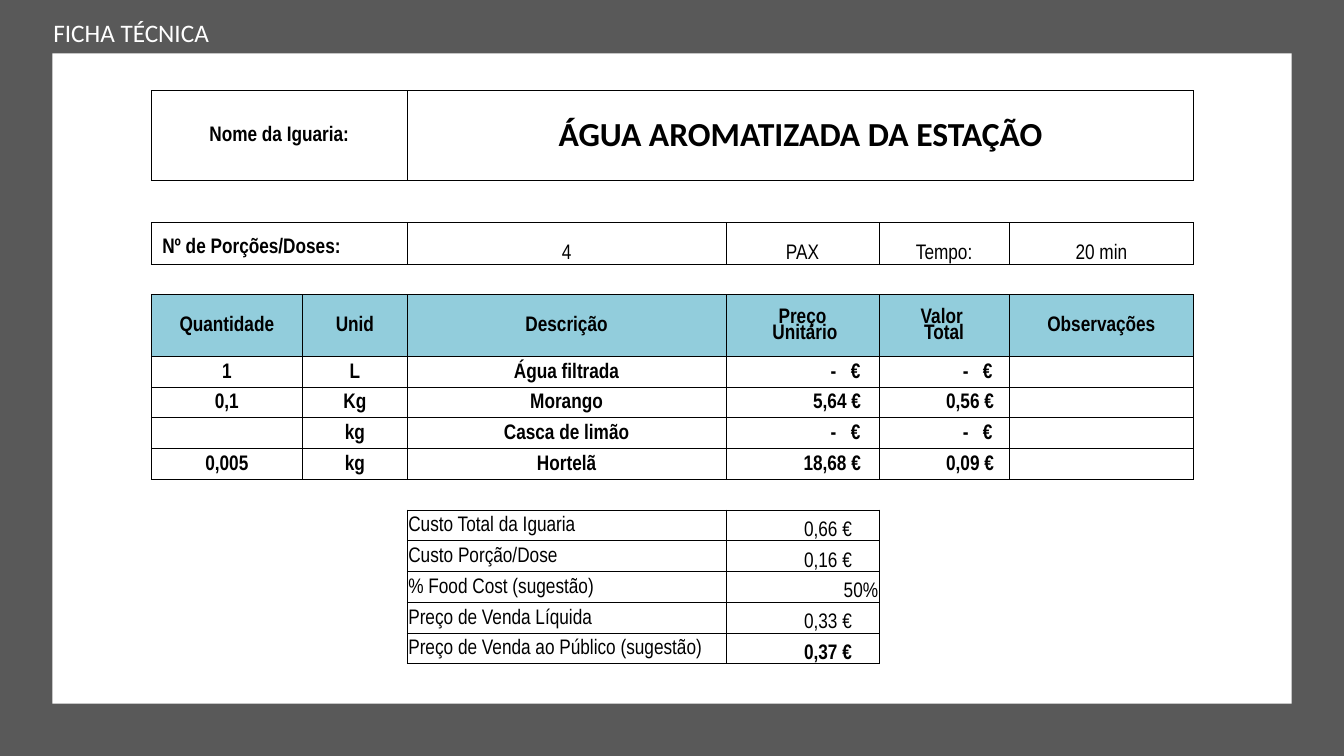
"""Build the recipe cost sheet slide."""
from lxml import etree
from pptx import Presentation
from pptx import util as u
from pptx.dml.color import RGBColor
from pptx.enum import shapes, text
from pptx.oxml import parse_xml
from pptx.oxml.ns import nsdecls, qn

COLORS = {"frame": "595959", "paper": "FFFFFF", "header": "92CDDC", "ink": "000000"}
HEADING = "FICHA TÉCNICA"
DISH = ("Nome da Iguaria:", "ÁGUA AROMATIZADA DA ESTAÇÃO")
SERVING = ["Nº de Porções/Doses:", "4", "PAX", "Tempo:", "20 min"]
HEADERS = ["Quantidade", "Unid", "Descrição", "Preço\n Unitário", "Valor \nTotal", "Observações"]
INGREDIENTS = [
    ("1", "L", "Água filtrada", "-\t€", "-\t€", ""),
    ("0,1", "Kg", "Morango", "5,64 €", "0,56 €", ""),
    ("", "kg", "Casca de limão", "-\t€", "-\t€", ""),
    ("0,005", "kg", "Hortelã", "18,68 €", "0,09 €", ""),
]
COSTS = [
    ("Custo Total da Iguaria", "0,66 €"),
    ("Custo Porção/Dose", "0,16 €"),
    ("% Food Cost (sugestão)", "50%"),
    ("Preço de Venda Líquida", "0,33 €"),
    ("Preço de Venda ao Público (sugestão)", "0,37 €"),
]

COLUMNS = [1.5, 1.04, 3.16, 1.52, 1.29, 1.83]
TABLE_LEFT, TABLE_TOP, TABLE_HEIGHT = 1.5, 0.9, 5.69
TALL_ROWS = {0: 0.89, 1: 0.42, 2: 0.41, 4: 0.61}
ROW_COUNT = 15
HEADER_ROW, COST_ROW = 4, 10
NARROW, TITLE_FONT = "Arial Narrow", "Calibri"
TIGHT = (0.01, 0.02, 0.01, 0)
ROOMY = (0.11, 0.06, 0.11, 0.06)
PRICE_INSETS = {3: 0.18, 4: 0.15}
DASH_INSETS = {3: 1.04, 4: 0.83}
COST_INSET = 0.27
LEFT, CENTER, RIGHT, JUSTIFY = (text.PP_ALIGN.LEFT, text.PP_ALIGN.CENTER,
                                text.PP_ALIGN.RIGHT, text.PP_ALIGN.JUSTIFY)
MIDDLE, BOTTOM = text.MSO_ANCHOR.MIDDLE, text.MSO_ANCHOR.BOTTOM


def add_span(para, words, size, font, color, bold=False):
    span = para.add_run()
    span.text = words
    span.font.size, span.font.name, span.font.bold = u.Pt(size), font, bold
    span.font.color.rgb = RGBColor.from_string(COLORS[color])


def add_panel(page, left, top, width, height, color):
    panel = page.shapes.add_shape(shapes.MSO_SHAPE.RECTANGLE, *map(u.Inches, (left, top, width, height)))
    panel.shadow.inherit = False
    panel.fill.solid()
    panel.fill.fore_color.rgb = RGBColor.from_string(COLORS[color])
    panel.line.fill.background()


def set_margins(cell, margins):
    cell.margin_left, cell.margin_top, cell.margin_right, cell.margin_bottom = map(u.Inches, margins)


def frame_cell(cell, fill=None):
    properties = cell._tc.get_or_add_tcPr()
    for side in "LRTB":
        properties.append(parse_xml(
            f'<a:ln{side} {nsdecls("a")} w="6350"><a:solidFill><a:srgbClr val="{COLORS["ink"]}"/>'
            f'</a:solidFill></a:ln{side}>'))
    if fill:
        cell.fill.solid()
        cell.fill.fore_color.rgb = RGBColor.from_string(COLORS[fill])


def write_cell(cell, words, align=CENTER, anchor=MIDDLE, margins=TIGHT, bold=True, size=15, font=NARROW):
    set_margins(cell, margins)
    cell.vertical_anchor = anchor
    para = cell.text_frame.paragraphs[0]
    para.alignment = align
    lines = words.split("\n")
    if len(lines) > 1:
        para.line_spacing = 0.85
    for number, line in enumerate(lines):
        if number:
            para.add_line_break()
        if line:
            add_span(para, line, size, font, "ink", bold)
    if "\t" in words:
        stops = etree.SubElement(para._p.get_or_add_pPr(), qn("a:tabLst"))
        etree.SubElement(stops, qn("a:tab"), pos=str(u.Inches(0.2)), algn="l")


def write_price(cell, column, price):
    if "\t" in price:
        write_cell(cell, price, LEFT, margins=(DASH_INSETS[column], 0.02, 0, 0))
    else:
        write_cell(cell, price, RIGHT, margins=(0.01, 0.02, PRICE_INSETS[column], 0))


def add_sheet(page):
    holder = page.shapes.add_table(ROW_COUNT, len(COLUMNS), u.Inches(TABLE_LEFT), u.Inches(TABLE_TOP),
                                   u.Inches(sum(COLUMNS)), u.Inches(TABLE_HEIGHT))
    sheet = holder.table
    sheet.first_row = sheet.horz_banding = False
    sheet._tbl.tblPr.find(qn("a:tableStyleId")).text = "{2D5ABB26-0587-4C30-8999-92F81FD0307C}"
    for column, width in zip(sheet.columns, COLUMNS):
        column.width = u.Inches(width)
    short = (TABLE_HEIGHT - sum(TALL_ROWS.values())) / (ROW_COUNT - len(TALL_ROWS))
    for number, row in enumerate(sheet.rows):
        row.height = u.Inches(TALL_ROWS.get(number, short))
        for column, cell in enumerate(row.cells):
            set_margins(cell, TIGHT)
            etree.SubElement(cell.text_frame.paragraphs[0]._p, qn("a:endParaRPr"), sz="1500")
            if number in (0, 2) or number >= COST_ROW and column in (2, 3):
                frame_cell(cell)
            elif HEADER_ROW <= number < COST_ROW - 1:
                frame_cell(cell, "header" if number == HEADER_ROW else "paper")
    for number in (0, 2):
        sheet.cell(number, 0).merge(sheet.cell(number, 1))
    sheet.cell(0, 2).merge(sheet.cell(0, 5))
    return sheet


def fill_sheet(sheet):
    write_cell(sheet.cell(0, 0), DISH[0], margins=ROOMY)
    write_cell(sheet.cell(0, 2), DISH[1], margins=ROOMY, size=24, font=TITLE_FONT)
    write_cell(sheet.cell(2, 0), SERVING[0], LEFT, BOTTOM, ROOMY)
    for column, words in enumerate(SERVING[1:], 2):
        write_cell(sheet.cell(2, column), words, anchor=BOTTOM, bold=False)
    for column, words in enumerate(HEADERS):
        write_cell(sheet.cell(HEADER_ROW, column), words)
    for number, ingredient in enumerate(INGREDIENTS, HEADER_ROW + 1):
        for column, words in enumerate(ingredient):
            if column in PRICE_INSETS:
                write_price(sheet.cell(number, column), column, words)
            else:
                write_cell(sheet.cell(number, column), words)
    for number, (label, value) in enumerate(COSTS, COST_ROW):
        inset = 0.01 if value.endswith("%") else COST_INSET
        write_cell(sheet.cell(number, 2), label, JUSTIFY, bold=False)
        write_cell(sheet.cell(number, 3), value, RIGHT, BOTTOM, (0.01, 0.02, inset, 0),
                   bold=number == ROW_COUNT - 1)


def main():
    deck = Presentation()
    deck.slide_width, deck.slide_height = u.Inches(13.33), u.Inches(7.5)
    page = deck.slides.add_slide(deck.slide_layouts[6])
    add_panel(page, 0, 0, 13.33, 7.5, "frame")
    add_panel(page, 0.52, 0.53, 12.29, 6.45, "paper")
    box = page.shapes.add_textbox(*map(u.Inches, (0.43, 0.12, 5.89, 0.4)))
    box.text_frame.word_wrap = True
    add_span(box.text_frame.paragraphs[0], HEADING, 18, TITLE_FONT, "paper")
    fill_sheet(add_sheet(page))
    deck.save("out.pptx")


if __name__ == "__main__":
    main()
